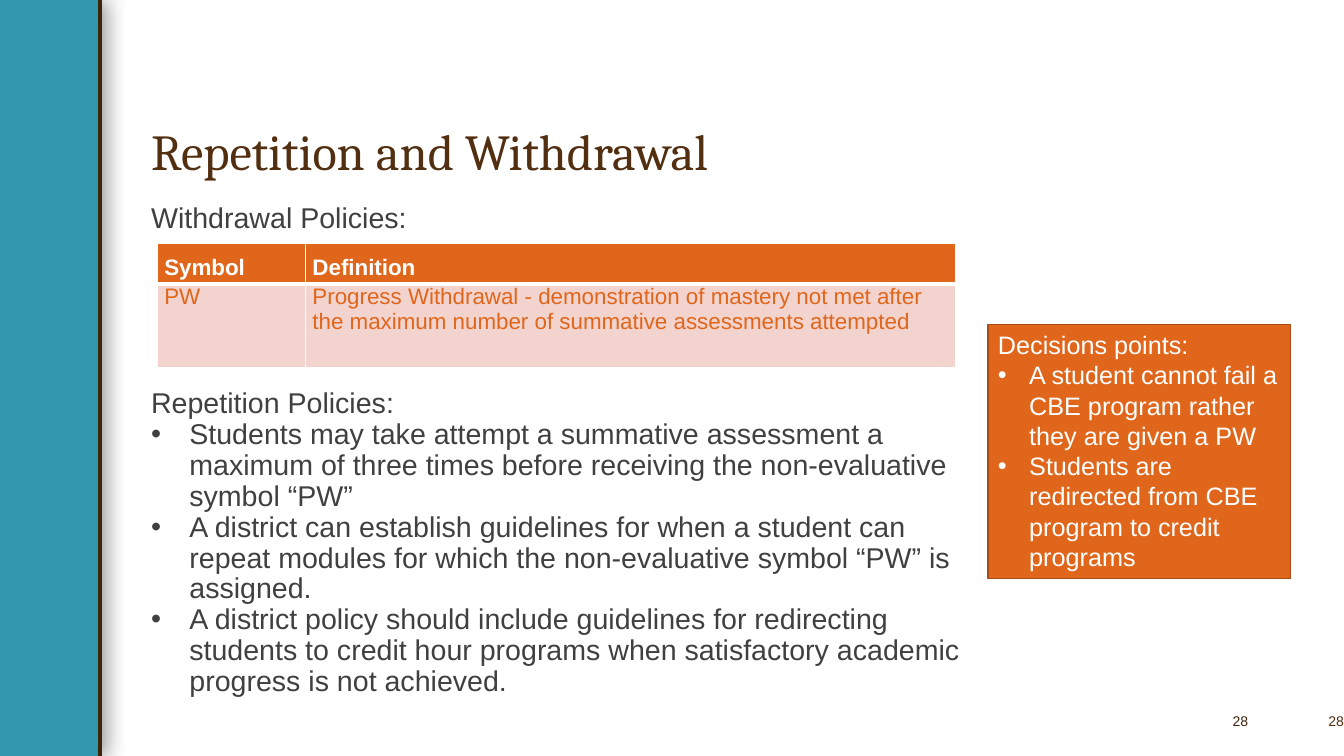
import pptx
import pptx.util
import pptx.dml.color
import pptx.enum.shapes
import pptx.enum.text
from dataclasses import dataclass
from lxml import etree
from pptx.oxml import parse_xml
from pptx.oxml.ns import nsdecls, qn

Inches = pptx.util.Inches
Pt = pptx.util.Pt
Align = pptx.enum.text.PP_ALIGN
Anchor = pptx.enum.text.MSO_ANCHOR


@dataclass(frozen=True)
class Theme:
    teal: str = "3298AE"
    rule: str = "3F240D"
    brown: str = "532F11"
    gray: str = "404040"
    orange: str = "E0661C"
    rust: str = "A64B15"
    pink: str = "F3D3CD"
    white: str = "FFFFFF"
    heading_font: str = "Cambria"
    text_font: str = "Arial"
    title: float = 36
    body: float = 20.4
    callout: float = 18
    table: float = 16
    number: float = 10


THEME = Theme()


def rgb(color):
    return pptx.dml.color.RGBColor.from_string(color)


def write(frame, lines, size, color, font=THEME.text_font, bold=False, indent=0,
          spacing=1.0, align=Align.LEFT, anchor=Anchor.TOP, insets=(0.1, 0.05, 0.1, 0.05)):
    """Fill a text frame; with an indent, every line after the first is a bullet."""
    left, top, right, bottom = map(Inches, insets)
    layout = {"word_wrap": True, "vertical_anchor": anchor, "margin_left": left,
              "margin_top": top, "margin_right": right, "margin_bottom": bottom}
    for name, value in layout.items():
        setattr(frame, name, value)
    for index, line in enumerate(lines):
        para = frame.paragraphs[0] if index == 0 else frame.add_paragraph()
        para_format = {"alignment": align, "line_spacing": spacing,
                       "space_before": Pt(0), "space_after": Pt(0)}
        for name, value in para_format.items():
            setattr(para, name, value)
        if indent and index:
            props = para._p.get_or_add_pPr()
            props.set("marL", str(Inches(indent)))
            props.set("indent", str(-Inches(indent)))
            etree.SubElement(props, qn("a:buFont")).set("typeface", "Arial")
            etree.SubElement(props, qn("a:buChar")).set("char", "•")
        span = para.add_run()
        span.text = line
        for name, value in {"name": font, "size": Pt(size), "bold": bold}.items():
            setattr(span.font, name, value)
        span.font.color.rgb = rgb(color)


def add_panel(page, box, fill):
    panel = page.shapes.add_shape(pptx.enum.shapes.MSO_SHAPE.RECTANGLE, *map(Inches, box))
    panel.shadow.inherit = False
    panel.fill.solid()
    panel.fill.fore_color.rgb = rgb(fill)
    panel.line.fill.background()
    return panel


def add_text(page, box, lines, size, color, **options):
    frame = page.shapes.add_textbox(*map(Inches, box)).text_frame
    write(frame, lines, size, color, **options)


def add_side_band(page, box):
    left, top, width, height = box
    band = add_panel(page, box, THEME.teal)
    effects = band._element.spPr.find(qn("a:effectLst"))
    effects.append(parse_xml(
        f'<a:outerShdw {nsdecls("a")} blurRad="{Pt(15)}" dist="{Pt(3)}" dir="0" rotWithShape="0">'
        '<a:srgbClr val="000000"><a:alpha val="40000"/></a:srgbClr></a:outerShdw>'))
    edge = left + width - 0.02
    rule = page.shapes.add_connector(
        pptx.enum.shapes.MSO_CONNECTOR.STRAIGHT,
        *map(Inches, (edge, top + height, edge, top)))
    rule.line.color.rgb = rgb(THEME.rule)
    rule.line.width = Pt(3)
    etree.SubElement(rule._element.spPr, qn("a:effectLst"))


def add_title(page, box, text):
    title = page.shapes.title
    for name, value in zip(("left", "top", "width", "height"), box):
        setattr(title, name, Inches(value))
    write(title.text_frame, [text], THEME.title, THEME.brown, font=THEME.heading_font,
          spacing=0.9, anchor=Anchor.BOTTOM)


def set_borders(cell, bottom):
    props = cell._tc.get_or_add_tcPr()
    widths = {"lnL": 1, "lnR": 1, "lnT": 1, "lnB": bottom}
    for index, (side, width) in enumerate(widths.items()):
        props.insert(index, parse_xml(
            f'<a:{side} {nsdecls("a")} w="{Pt(width)}"><a:solidFill>'
            f'<a:srgbClr val="{THEME.white}"/></a:solidFill></a:{side}>'))


def add_symbol_table(page, box, rows):
    left, top, width, height = box
    table = page.shapes.add_table(len(rows), 2, *map(Inches, box)).table
    first_column, header_height = 1.47, 0.41
    for column, size in zip(table.columns, (first_column, width - first_column)):
        column.width = Inches(size)
    for row, size in zip(table.rows, (header_height, height - header_height)):
        row.height = Inches(size)
    for row_index, row in enumerate(rows):
        header = row_index == 0
        for column_index, text in enumerate(row):
            cell = table.cell(row_index, column_index)
            cell.fill.solid()
            cell.fill.fore_color.rgb = rgb(THEME.orange if header else THEME.pink)
            write(cell.text_frame, [text], THEME.table,
                  THEME.white if header else THEME.orange,
                  bold=header, spacing=1.5 if header else 1.0)
            margins = {"margin_left": 0.07, "margin_right": 0.07,
                       "margin_top": 0, "margin_bottom": 0}
            for name, value in margins.items():
                setattr(cell, name, Inches(value))
            set_borders(cell, 3 if header else 1)


def add_policies(page, box):
    left, top, width, height = box
    style = {"size": THEME.body, "color": THEME.gray, "spacing": 0.9}
    add_text(page, (left, top, width, 0.4), ["Withdrawal Policies:"], **style)
    add_symbol_table(page, (left + 0.16, top + 0.44, 7.92, 1.24), [
        ("Symbol", "Definition"),
        ("PW", "Progress Withdrawal - demonstration of mastery not met after "
               "the maximum number of summative assessments attempted"),
    ])
    offset = 1.84
    add_text(page, (left, top + offset, width, height - offset), [
        "Repetition Policies:",
        "Students may take attempt a summative assessment a maximum of three times "
        "before receiving the non-evaluative symbol “PW”",
        "A district can establish guidelines for when a student can repeat modules "
        "for which the non-evaluative symbol “PW” is assigned.",
        "A district policy should include guidelines for redirecting students to credit "
        "hour programs when satisfactory academic progress is not achieved.",
    ], indent=0.38, **style)


def add_decisions(page, box):
    panel = add_panel(page, box, THEME.orange)
    panel.line.color.rgb = rgb(THEME.rust)
    panel.line.width = Pt(1)
    write(panel.text_frame, [
        "Decisions points:",
        "A student cannot fail a CBE program rather they are given a PW",
        "Students are redirected from CBE program to credit programs",
    ], THEME.callout, THEME.white, indent=0.31)


def add_page_numbers(page, box):
    left, top, width, height = box
    for shift, color in ((0, THEME.rule), (0.95, THEME.brown)):
        add_text(page, (left + shift, top, width, height), ["28"], THEME.number, color,
                 align=Align.RIGHT, anchor=Anchor.MIDDLE, insets=(0.1, 0.05, 0, 0.05))


def main():
    deck = pptx.Presentation()
    deck.slide_width, deck.slide_height = Inches(13.33), Inches(7.5)
    page = deck.slides.add_slide(deck.slide_layouts.get_by_name("Title Only"))
    add_side_band(page, (0, 0, 1.01, 7.5))
    add_title(page, (1.4, 0.4, 10.99, 1.45), "Repetition and Withdrawal")
    add_policies(page, (1.4, 1.97, 8.25, 5.3))
    add_decisions(page, (9.8, 3.22, 3, 2.52))
    add_page_numbers(page, (9.38, 6.95, 3, 0.4))
    deck.save("out.pptx")


if __name__ == "__main__":
    main()
